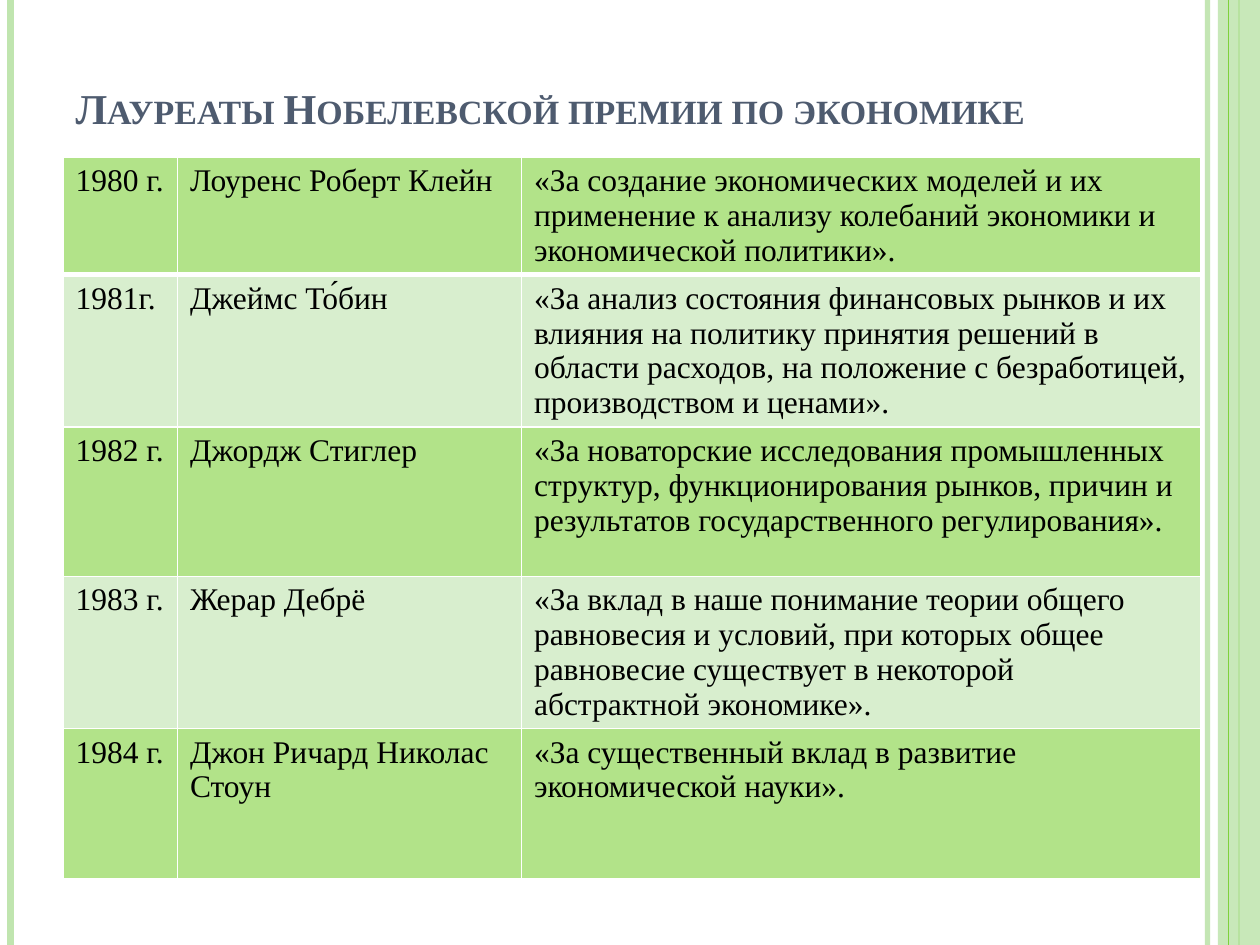
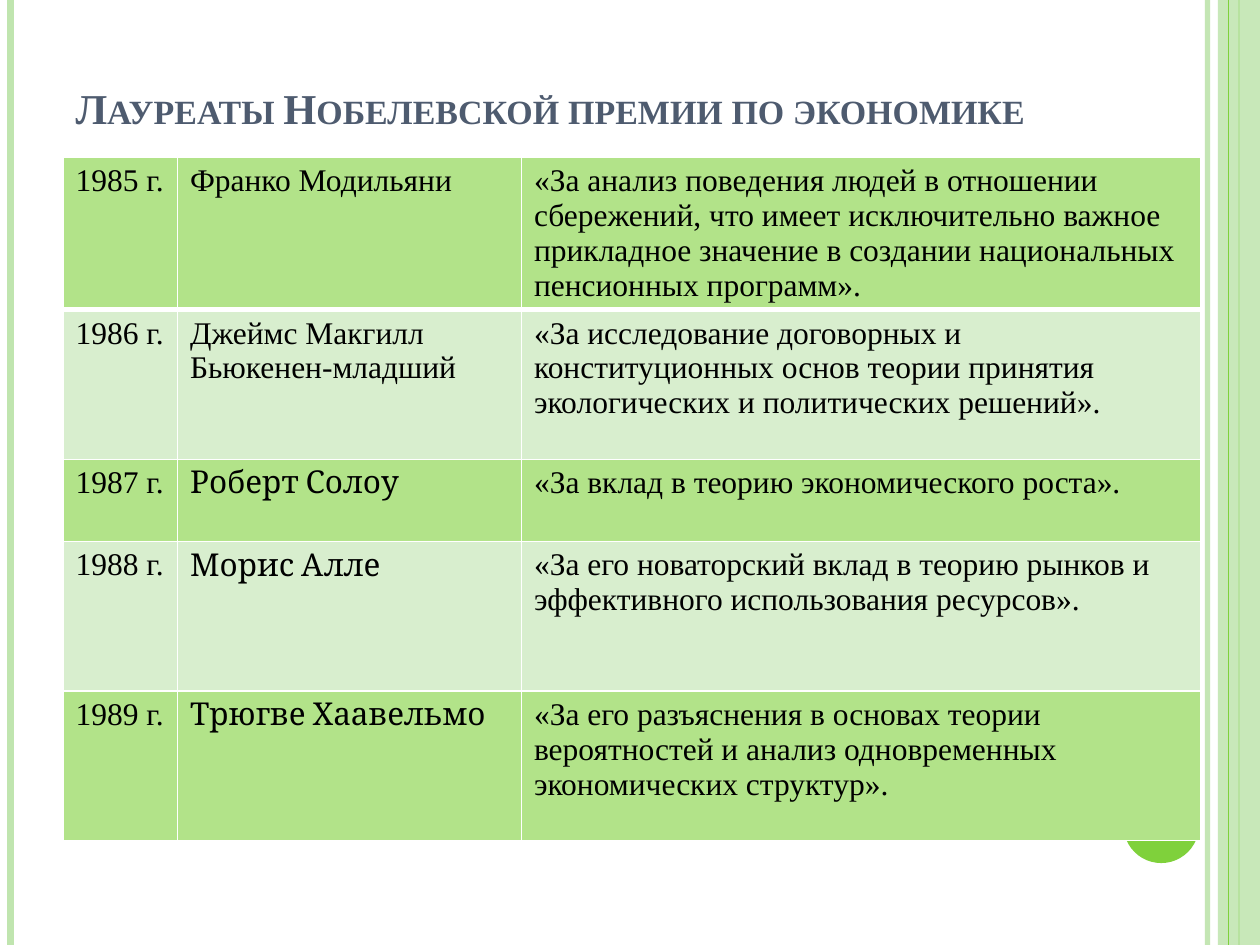
from lxml import etree
from pptx import Presentation
from pptx.dml.color import RGBColor
from pptx.enum.shapes import MSO_CONNECTOR, MSO_SHAPE
from pptx.enum.text import MSO_ANCHOR, MSO_AUTO_SIZE, PP_ALIGN
from pptx.oxml.ns import qn
from pptx.util import Pt

STRAIGHT = MSO_CONNECTOR.STRAIGHT
RECTANGLE = MSO_SHAPE.RECTANGLE
ELLIPSE = MSO_SHAPE.OVAL
BOTTOM = MSO_ANCHOR.BOTTOM
NO_AUTOFIT = MSO_AUTO_SIZE.NONE
LEFT = PP_ALIGN.LEFT

SLIDE_WIDTH, SLIDE_HEIGHT = 720, 540
TITLE_ONLY = 5
COLORS = {
    "title": "4E5B6F",
    "text": "000000",
    "accent": "7FD13B",
    "band": "C0E5AF",
    "row_dark": "B2E389",
    "row_light": "D8EECE",
    "border": "FFFFFF",
}
BODY_FONT = "Times New Roman"
NAME_FONT = "Cambria"
COLUMN_WIDTHS = (65.4, 196.6, 388)

TITLE = "Лауреаты Нобелевской премии по экономике"
LAUREATES_1980_1984 = [
    ("1980 г.", "Лоуренс Роберт Клейн",
     "«За создание экономических моделей и их применение к анализу колебаний "
     "экономики и экономической политики»."),
    ("1981г.", "Джеймс То́бин",
     "«За анализ состояния финансовых рынков и их влияния на политику принятия "
     "решений в области расходов, на положение с безработицей, производством и ценами»."),
    ("1982 г.", "Джордж Стиглер",
     "«За новаторские исследования промышленных структур, функционирования рынков, "
     "причин и результатов государственного регулирования»."),
    ("1983 г.", "Жерар Дебрё",
     "«За вклад в наше понимание теории общего равновесия и условий, при которых "
     "общее равновесие существует в некоторой абстрактной экономике»."),
    ("1984 г.", "Джон Ричард Николас Стоун",
     "«За существенный вклад в развитие экономической науки»."),
]
LAUREATES_1985_1989 = [
    ("1985 г.", "Франко Модильяни",
     "«За анализ поведения людей в отношении сбережений, что имеет исключительно "
     "важное прикладное значение в создании национальных пенсионных программ»."),
    ("1986 г.", "Джеймс Макгилл Бьюкенен-младший",
     "«За исследование договорных и конституционных основ теории принятия "
     "экологических и политических решений»."),
    ("1987 г.", "Роберт Солоу", "«За вклад в теорию экономического роста»."),
    ("1988 г.", "Морис Алле",
     "«За его новаторский вклад в теорию рынков и эффективного использования ресурсов»."),
    ("1989 г.", "Трюгве Хаавельмо",
     "«За его разъяснения в основах теории вероятностей и анализ одновременных "
     "экономических структур»."),
]


def write_text(text_frame, text, font=BODY_FONT, size=18, color="text", bold=False,
               small_caps=False):
    paragraph = text_frame.paragraphs[0]
    paragraph.alignment = LEFT
    run = paragraph.add_run()
    run.text = text
    run.font.name = font
    run.font.size = Pt(size)
    run.font.bold = bold
    run.font.color.rgb = RGBColor.from_string(COLORS[color])
    if small_caps:
        run._r.get_or_add_rPr().set("cap", "small")


def set_opacity(shape_part, percent):
    for color in shape_part.iter(qn("a:srgbClr")):
        etree.SubElement(color, qn("a:alpha"), val=str(percent * 1000))


class LaureateDeck:
    """Holds the shared style and the slide being built."""

    def __init__(self):
        self.presentation = Presentation()
        self.presentation.slide_width = Pt(SLIDE_WIDTH)
        self.presentation.slide_height = Pt(SLIDE_HEIGHT)
        self.slide = None

    def add_slide(self, title):
        layout = self.presentation.slide_layouts[TITLE_ONLY]
        self.slide = self.presentation.slides.add_slide(layout)
        self.add_vertical_line(690, "band", 3, opacity=93)
        self.add_vertical_line(6, "band", 4.5)
        self.add_vertical_line(708, "accent", 1.5)
        self.add_shape(RECTANGLE, 696, 0, 24, SLIDE_HEIGHT, "band", opacity=87)
        self.add_vertical_line(702, "accent", 0.75)
        self.add_shape(ELLIPSE, 642, 450, 43.2, 43.2, "accent")
        self.format_title(title)

    def add_vertical_line(self, left, color, width, opacity=100):
        line = self.slide.shapes.add_connector(
            STRAIGHT, Pt(left), Pt(0), Pt(left), Pt(SLIDE_HEIGHT))
        line.line.color.rgb = RGBColor.from_string(COLORS[color])
        line.line.width = Pt(width)
        if opacity < 100:
            set_opacity(line._element, opacity)
        etree.SubElement(line._element.spPr, qn("a:effectLst"))

    def add_shape(self, kind, left, top, width, height, color, opacity=100):
        shape = self.slide.shapes.add_shape(kind, Pt(left), Pt(top), Pt(width), Pt(height))
        shape.shadow.inherit = False
        shape.fill.solid()
        shape.fill.fore_color.rgb = RGBColor.from_string(COLORS[color])
        shape.line.fill.background()
        if opacity < 100:
            set_opacity(shape._element, opacity)

    def format_title(self, text):
        title = self.slide.shapes.title
        title.left, title.top, title.width, title.height = Pt(36), Pt(21.6), Pt(588), Pt(90)
        text_frame = title.text_frame
        text_frame.auto_size = NO_AUTOFIT
        text_frame.word_wrap = True
        text_frame.vertical_anchor = BOTTOM
        text_frame.margin_bottom = Pt(35.5)
        write_text(text_frame, text, size=24.3, color="title", bold=True, small_caps=True)

    def add_table(self, rows, row_heights, name_font_start):
        frame = self.slide.shapes.add_table(
            len(rows), len(COLUMN_WIDTHS), Pt(36), Pt(90),
            Pt(sum(COLUMN_WIDTHS)), Pt(sum(row_heights)))
        table = frame.table
        table.first_row = False
        table.horz_banding = False
        for column, width in zip(table.columns, COLUMN_WIDTHS):
            column.width = Pt(width)
        for row_index, (texts, height) in enumerate(zip(rows, row_heights)):
            table.rows[row_index].height = Pt(height)
            for column_index, text in enumerate(texts):
                in_name_font = column_index == 1 and row_index >= name_font_start
                cell = table.cell(row_index, column_index)
                self.format_cell(cell, row_index)
                write_text(cell.text_frame, text, font=NAME_FONT if in_name_font else BODY_FONT)

    def format_cell(self, cell, row_index):
        properties = cell._tc.get_or_add_tcPr()
        widths = {"lnL": 1, "lnR": 1, "lnT": 3 if row_index == 1 else 1,
                  "lnB": 3 if row_index == 0 else 1}
        for side, width in widths.items():
            border = etree.SubElement(properties, qn(f"a:{side}"), w=str(Pt(width)))
            fill = etree.SubElement(border, qn("a:solidFill"))
            etree.SubElement(fill, qn("a:srgbClr"), val=COLORS["border"])
        color = "row_light" if row_index % 2 else "row_dark"
        cell.fill.solid()
        cell.fill.fore_color.rgb = RGBColor.from_string(COLORS[color])


def main():
    deck = LaureateDeck()
    for rows, row_heights, name_font_start in (
        (LAUREATES_1980_1984, (67, 86, 85.5, 86, 85.5), 5),
        (LAUREATES_1985_1989, (86, 85.5, 47, 85.5, 85.5), 2),
    ):
        deck.add_slide(TITLE)
        deck.add_table(rows, row_heights, name_font_start)
    deck.presentation.save("out.pptx")


if __name__ == "__main__":
    main()
